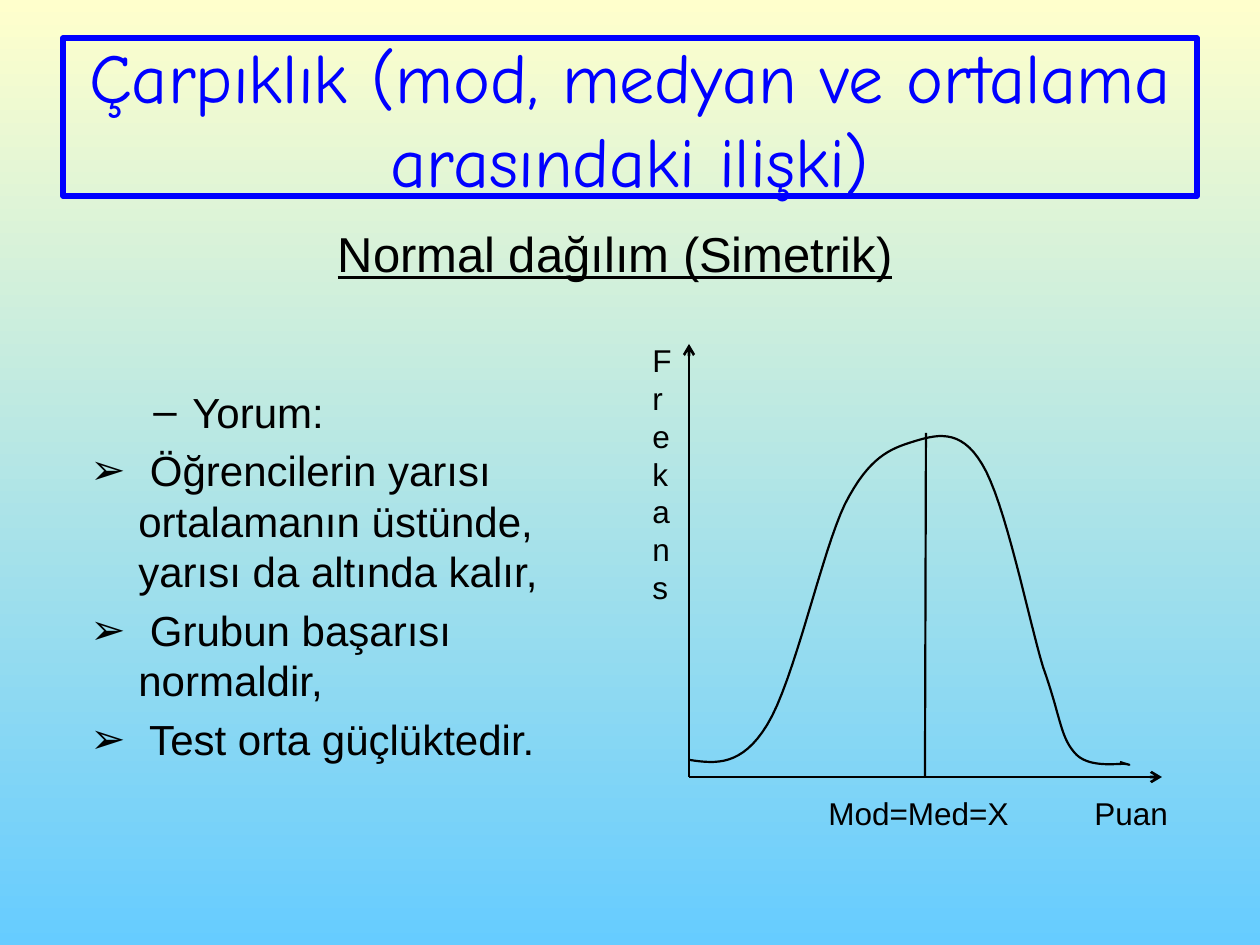
from itertools import pairwise

from lxml.etree import SubElement
from pptx import Presentation
from pptx.dml.color import RGBColor
from pptx.enum.shapes import MSO_CONNECTOR as Connector, MSO_SHAPE as Shape
from pptx.enum.text import MSO_ANCHOR as Anchor, PP_ALIGN as Align
from pptx.oxml.ns import qn
from pptx.util import Pt

EMU_PER_PX = 914400 / 126
COLORS = {"sky_top": "FFFFCC", "sky_bottom": "66CCFF", "title": "0000FF", "ink": "000000"}
CURVE_START = (50, 425)
CURVE_SEGMENTS = [
    ((76, 429), (102, 431), (127, 390)),
    ((154, 347), (182, 216), (205, 169)),
    ((229, 122), (250, 114), (272, 107)),
    ((295, 100), (320, 92), (342, 129)),
    ((365, 166), (388, 282), (403, 332)),
    ((420, 379), (420, 401), (434, 417)),
    ((447, 434), (478, 428), (486, 429)),
    ((494, 431), (486, 429), (480, 427)),
]
CURVE_STEPS = 16
COMMENTS = [
    ("Yorum:", "–", 102, 39),
    (" Öğrencilerin yarısı ortalamanın üstünde, yarısı da altında kalır,", "➢", 48, 48),
    (" Grubun başarısı normaldir,", "➢", 48, 48),
    (" Test orta güçlüktedir.", "➢", 48, 48),
]


def px(length):
    return round(length * EMU_PER_PX)


def color(name):
    return RGBColor.from_string(COLORS[name])


def apply_format(target, values):
    for name, value in values.items():
        setattr(target, name, value)


def write(para, text, size, font="Arial", ink="ink", **extra):
    span = para.add_run()
    span.text = text
    apply_format(span.font, {"name": font, "size": Pt(size), **extra})
    span.font.color.rgb = color(ink)


def add_text(page, box, text, size, align=Align.LEFT, **extra):
    frame = page.shapes.add_textbox(*map(px, box)).text_frame
    frame.word_wrap = True
    para = frame.paragraphs[0]
    para.alignment = align
    write(para, text, size, **extra)


def add_line(page, start, end, width, arrow=False):
    line = page.shapes.add_connector(Connector.STRAIGHT, *map(px, start + end))
    line.line.width = Pt(width)
    line.line.color.rgb = color("ink")
    if arrow:
        SubElement(line.line._get_or_add_ln(), qn("a:tailEnd"), type="arrow")
    SubElement(line._element.spPr, qn("a:effectLst"))


def paint_background(page):
    fill = page.background.fill
    fill.gradient()
    fill.gradient_angle = 270
    for stop, name, position in zip(fill.gradient_stops, ("sky_top", "sky_bottom"), (0, 1)):
        stop.color.rgb = color(name)
        stop.position = position


def add_title(page, box):
    title = page.shapes.add_shape(Shape.RECTANGLE, *map(px, box))
    title.shadow.inherit = False
    title.fill.background()
    title.line.width = Pt(3.25)
    title.line.color.rgb = color("title")
    apply_format(title.text_frame, {"word_wrap": True, "vertical_anchor": Anchor.MIDDLE})
    para = title.text_frame.paragraphs[0]
    para.alignment = Align.CENTER
    write(para, "Çarpıklık (mod, medyan ve ortalama arasındaki ilişki)", 40, "Comic Neue", "title")


def add_comments(page, box):
    frame = page.shapes.add_textbox(*map(px, box)).text_frame
    apply_format(frame, {"word_wrap": True, "margin_top": px(65)})
    for index, (text, bullet, margin, hang) in enumerate(COMMENTS):
        para = frame.add_paragraph() if index else frame.paragraphs[0]
        para.space_before = Pt(4.8 if index else 0)
        props = para._p.get_or_add_pPr()
        props.set("marL", str(px(margin)))
        props.set("indent", str(-px(hang)))
        SubElement(props, qn("a:buFont"), typeface="Arial")
        SubElement(props, qn("a:buChar"), char=bullet)
        write(para, text, 24)


def bezier(points, t):
    weights = ((1 - t) ** 3, 3 * t * (1 - t) ** 2, 3 * t * t * (1 - t), t ** 3)
    return tuple(sum(w * p[axis] for w, p in zip(weights, points)) for axis in (0, 1))


def add_distribution(page, box):
    left, top, width, height = box

    def at(x, y):
        return left + x, top + y

    origin = at(49, 442)
    add_line(page, origin, at(49, 9), 1.5, arrow=True)
    add_line(page, origin, at(522, 442), 1.5, arrow=True)

    anchors = [CURVE_START] + [segment[-1] for segment in CURVE_SEGMENTS]
    points = [
        bezier((start, *segment), step / CURVE_STEPS)
        for (start, _), segment in zip(pairwise(anchors), CURVE_SEGMENTS)
        for step in range(1, CURVE_STEPS + 1)
    ]
    builder = page.shapes.build_freeform(*map(px, at(*CURVE_START)))
    builder.add_line_segments([tuple(map(px, at(*point))) for point in points], close=False)
    curve = builder.convert_to_shape()
    curve.shadow.inherit = False
    curve.fill.background()
    curve.line.width = Pt(1.25)
    curve.line.color.rgb = color("ink")

    add_line(page, at(286, 98), at(285, 442), 1.25)
    add_text(page, (*at(442, 453), 137, 50), "Puan", 18)
    add_text(page, (*at(0, 0), 49, 280), "Frekans", 18)
    add_text(page, (*at(176, 453), 227, 50), "Mod=Med=X", 18)


def main():
    deck = Presentation()
    apply_format(deck, {"slide_width": px(1260), "slide_height": px(945)})
    page = deck.slides.add_slide(deck.slide_layouts[6])
    paint_background(page)
    add_title(page, (63, 38, 1134, 158))
    add_comments(page, (78, 321, 577, 624))
    add_distribution(page, (640, 335, 580, 503))
    add_text(page, (295, 217, 640, 72), "Normal dağılım (Simetrik)", 28, Align.CENTER, underline=True)
    deck.save("out.pptx")


if __name__ == "__main__":
    main()
